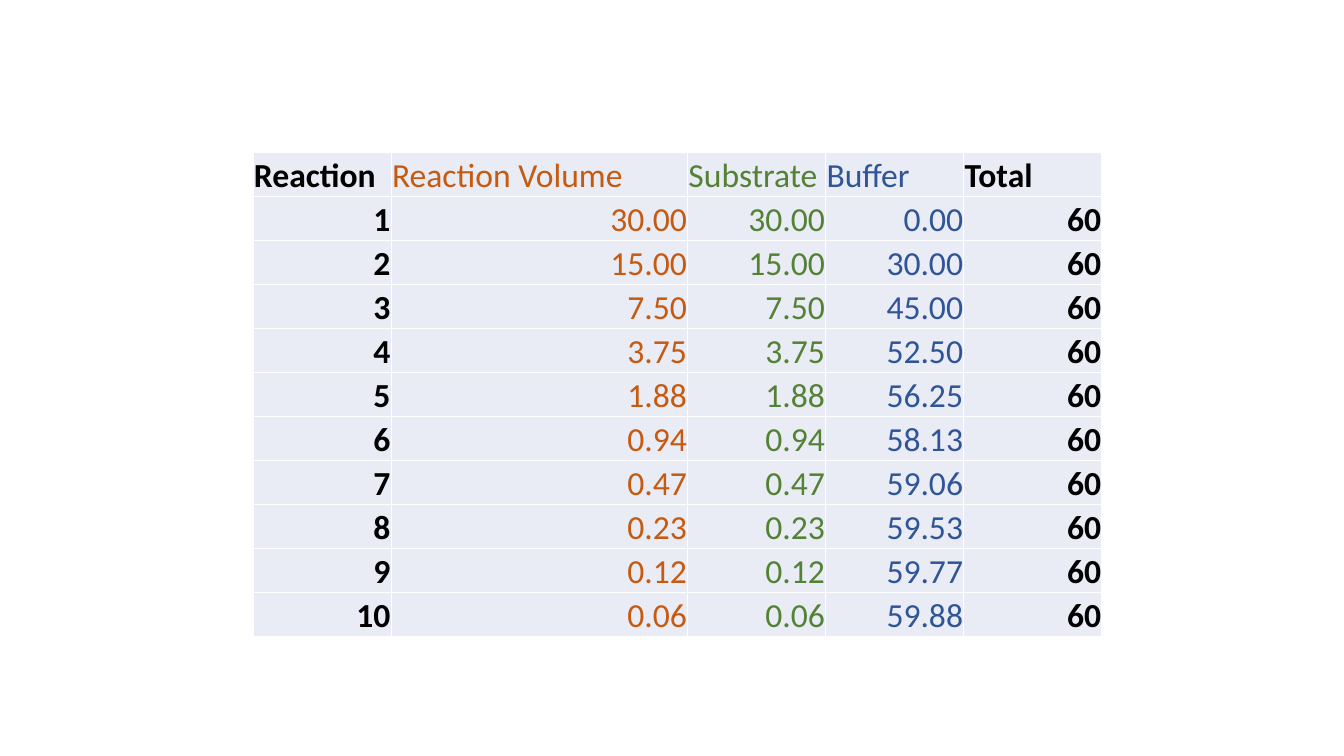
from lxml.etree import SubElement
from pptx import Presentation
from pptx.dml.color import RGBColor
from pptx.enum.text import MSO_ANCHOR, PP_ALIGN
from pptx.oxml.ns import qn
from pptx.util import Cm, Pt

COLORS = {
    "label": "000000",
    "volume": "C55A11",
    "substrate": "548235",
    "buffer": "2F5597",
    "cell": "E9EBF5",
    "border": "FFFFFF",
}
COLUMNS = [
    ("Reaction", 3.48, "label"),
    ("Reaction Volume", 7.47, "volume"),
    ("Substrate", 3.48, "substrate"),
    ("Buffer", 3.48, "buffer"),
    ("Total", 3.48, "label"),
]
TOTAL = "60"
DILUTIONS = [
    ("30.00", "0.00"),
    ("15.00", "30.00"),
    ("7.50", "45.00"),
    ("3.75", "52.50"),
    ("1.88", "56.25"),
    ("0.94", "58.13"),
    ("0.47", "59.06"),
    ("0.23", "59.53"),
    ("0.12", "59.77"),
    ("0.06", "59.88"),
]


def add_borders(cell):
    """Draw a thin line on all four sides of a cell."""
    properties = cell._tc.get_or_add_tcPr()
    for side in ("a:lnL", "a:lnR", "a:lnT", "a:lnB"):
        line = SubElement(properties, qn(side), w=str(Pt(1)))
        fill = SubElement(line, qn("a:solidFill"))
        SubElement(fill, qn("a:srgbClr"), val=COLORS["border"])


def fill_cell(cell, text, color, align):
    """Write and format the content of one cell."""
    cell.margin_left = cell.margin_right = cell.margin_top = Cm(0.02)
    cell.margin_bottom = Cm(0)
    cell.vertical_anchor = MSO_ANCHOR.BOTTOM
    add_borders(cell)
    cell.fill.solid()
    cell.fill.fore_color.rgb = RGBColor.from_string(COLORS["cell"])
    cell.text_frame.text = text
    paragraph = cell.text_frame.paragraphs[0]
    paragraph.alignment = align
    font = paragraph.runs[0].font
    font.name = "Calibri"
    font.size = Pt(24)
    font.bold = color == "label"
    font.color.rgb = RGBColor.from_string(COLORS[color])


def add_dilution_table(slide, left, top, width, height):
    """Place the dilution series in the given box, in centimetres."""
    reactions = [
        (str(number), volume, volume, buffer, TOTAL)
        for number, (volume, buffer) in enumerate(DILUTIONS, start=1)
    ]
    rows = [[heading for heading, _, _ in COLUMNS], *reactions]
    dilutions = slide.shapes.add_table(
        len(rows), len(COLUMNS), Cm(left), Cm(top), Cm(width), Cm(height)
    ).table
    dilutions.horz_banding = False
    for column, (_, column_width, _) in zip(dilutions.columns, COLUMNS):
        column.width = Cm(column_width)
    for row_index, values in enumerate(rows):
        align = PP_ALIGN.RIGHT if row_index else PP_ALIGN.LEFT
        for column_index, value in enumerate(values):
            color = COLUMNS[column_index][2]
            fill_cell(dilutions.cell(row_index, column_index), value, color, align)


def main():
    """Build and save the presentation."""
    presentation = Presentation()
    presentation.slide_width = Cm(33.87)
    presentation.slide_height = Cm(19.05)
    slide = presentation.slides.add_slide(presentation.slide_layouts[6])
    table_width = sum(width for _, width, _ in COLUMNS)
    add_dilution_table(slide, 6.38, 3.84, table_width, 12.21)
    presentation.save("out.pptx")


if __name__ == "__main__":
    main()
